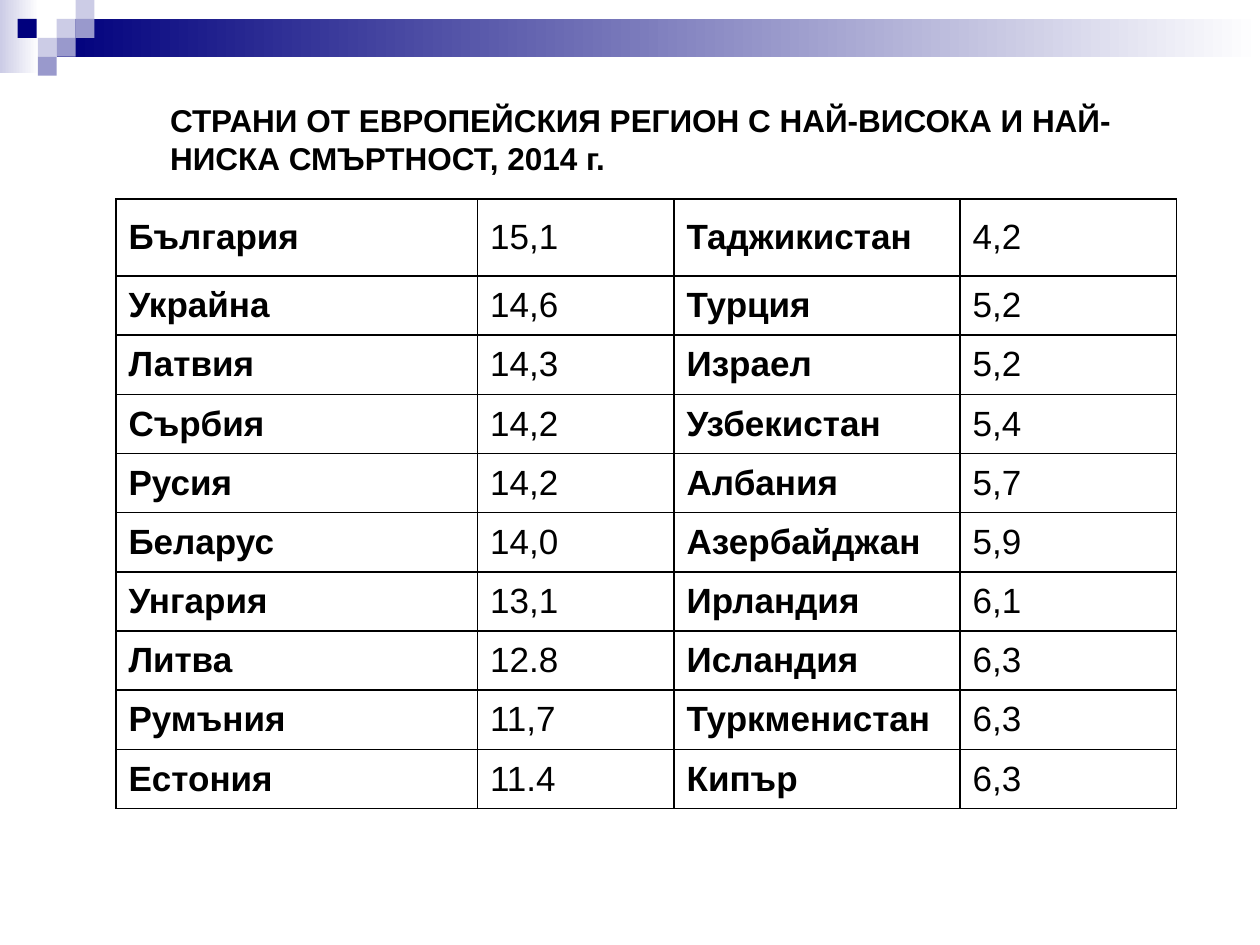
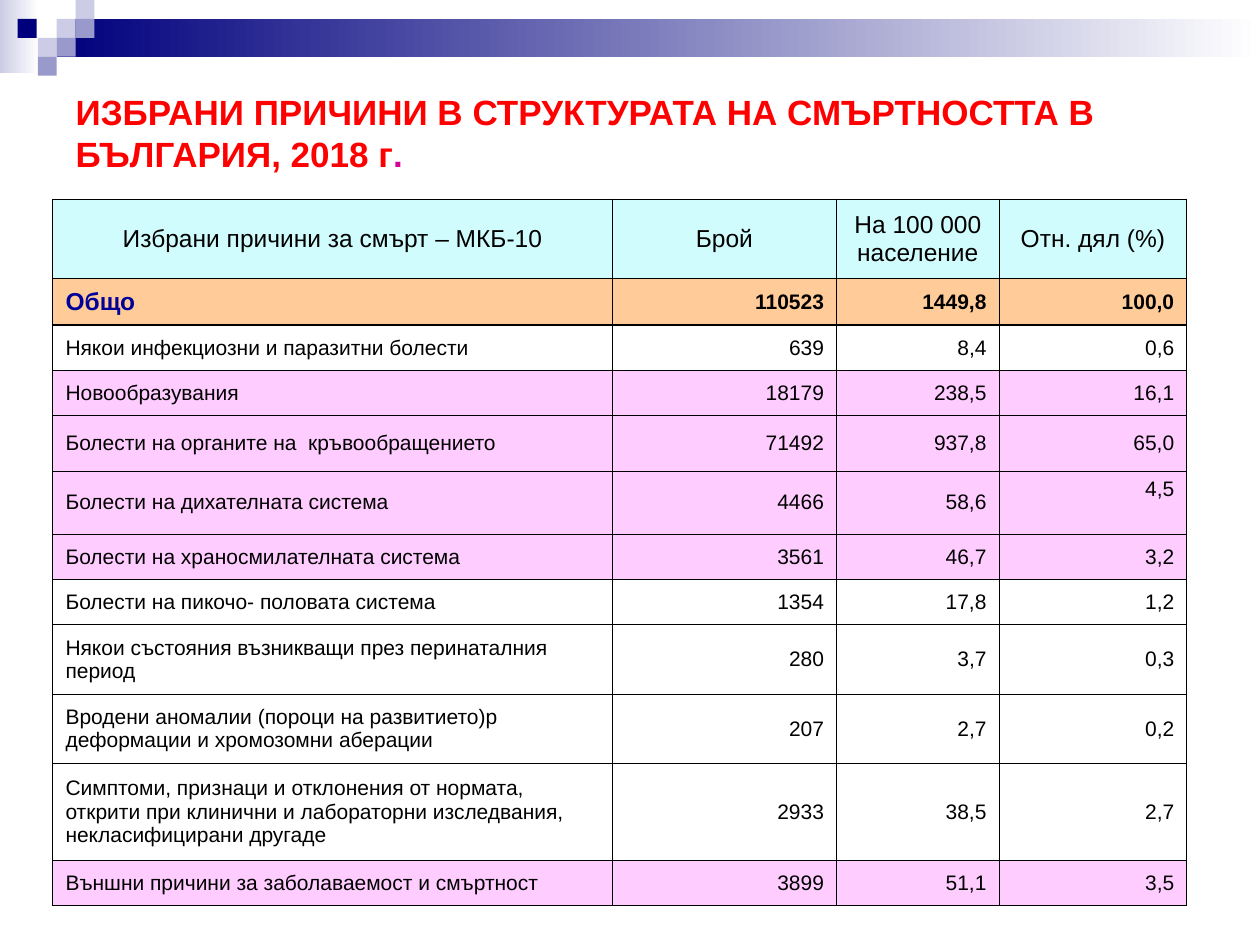
import pptx
import pptx.dml.color
import pptx.enum.shapes
import pptx.enum.text
import pptx.oxml
import pptx.oxml.ns
import pptx.util

Inches = pptx.util.Inches
ALIGN = pptx.enum.text.PP_ALIGN
ANCHOR = pptx.enum.text.MSO_ANCHOR

FONT = "Arial"
BLACK, WHITE, RED, MAGENTA = "000000", "FFFFFF", "FF0000", "D60093"
NAVY, LAVENDER, VIOLET = "00007D", "CCCCE6", "9999CC"
HEADER_FILL, TOTAL_FILL, KEY_CAUSE_FILL = "D1FCFD", "FFCC99", "FFCCFF"
TOTAL_TEXT = "000099"

BAND_SQUARE = 0.15
BAND_SQUARES = [  # left, top, colour
    (0.45, 0.15, LAVENDER), (0.6, 0, LAVENDER), (0.6, 0.15, VIOLET),
    (0.3, 0.3, LAVENDER), (0.14, 0.15, NAVY), (0.45, 0.3, VIOLET),
    (0.3, 0.45, VIOLET),
]

HIGHEST_AND_LOWEST = [
    ("България", "15,1", "Таджикистан", "4,2"),
    ("Украйна", "14,6", "Турция", "5,2"),
    ("Латвия", "14,3", "Израел", "5,2"),
    ("Сърбия", "14,2", "Узбекистан", "5,4"),
    ("Русия", "14,2", "Албания", "5,7"),
    ("Беларус", "14,0", "Азербайджан", "5,9"),
    ("Унгария", "13,1", "Ирландия", "6,1"),
    ("Литва", "12.8", "Исландия", "6,3"),
    ("Румъния", "11,7", "Туркменистан", "6,3"),
    ("Естония", "11.4", "Кипър", "6,3"),
]

CAUSES_HEADER = ("Избрани причини за смърт – МКБ-10", "Брой",
                 "На 100 000 население", "Отн. дял (%)")
CAUSES_TOTAL = ("Общо", "110523", "1449,8", "100,0")
CAUSES = [  # row height, fill, cells
    (0.36, None, ("Някои инфекциозни и паразитни болести", "639", "8,4", "0,6")),
    (0.36, KEY_CAUSE_FILL, ("Новообразувания", "18179", "238,5", "16,1")),
    (0.44, KEY_CAUSE_FILL, ("Болести на органите на  кръвообращението",
                            "71492", "937,8", "65,0")),
    (0.5, KEY_CAUSE_FILL, ("Болести на дихателната система", "4466", "58,6", "4,5")),
    (0.36, KEY_CAUSE_FILL, ("Болести на храносмилателната система",
                            "3561", "46,7", "3,2")),
    (0.36, None, ("Болести на пикочо- половата система", "1354", "17,8", "1,2")),
    (0.55, None, ("Някои състояния възникващи през перинаталния период",
                  "280", "3,7", "0,3")),
    (0.55, None, ("Вродени аномалии (пороци на развитието)р деформации и "
                  "хромозомни аберации", "207", "2,7", "0,2")),
    (0.77, None, ("Симптоми, признаци и отклонения от нормата, открити при "
                  "клинични и лабораторни изследвания, некласифицирани другаде",
                  "2933", "38,5", "2,7")),
    (0.36, KEY_CAUSE_FILL, ("Външни причини за заболаваемост и смъртност",
                            "3899", "51,1", "3,5")),
]
RESPIRATORY_ROW = 5


def rgb(colour):
    return pptx.dml.color.RGBColor.from_string(colour)


def format_run(run, size, colour=BLACK, bold=False):
    run.font.name = FONT
    run.font.size = pptx.util.Pt(size)
    run.font.bold = bold
    run.font.color.rgb = rgb(colour)


def add_band_part(slide, box, colour, fades=False):
    part = slide.shapes.add_shape(pptx.enum.shapes.MSO_SHAPE.RECTANGLE,
                                  *map(Inches, box))
    part.shadow.inherit = False
    part.line.fill.background()
    if fades:
        part.fill.gradient()
        part.fill.gradient_angle = 0
        for stop, stop_colour in zip(part.fill.gradient_stops, (colour, WHITE)):
            stop.color.rgb = rgb(stop_colour)
    else:
        part.fill.solid()
        part.fill.fore_color.rgb = rgb(colour)
    return part


def add_band_to_layout(slide):
    """Draw the top band and move it to the layout that all slides share."""
    parts = [add_band_part(slide, (0, 0, 0.31, 0.58), LAVENDER, fades=True),
             add_band_part(slide, (0.45, 0.15, 9.55, 0.3), NAVY, fades=True)]
    for left, top, colour in BAND_SQUARES:
        box = (left, top, BAND_SQUARE, BAND_SQUARE)
        parts.append(add_band_part(slide, box, colour))
    for part in parts:
        slide.slide_layout.shapes.element.append(part.element)


def set_title(slide, box, pieces, size):
    """Fill the title with pieces of (text, colour)."""
    title = slide.shapes.title
    title.left, title.top, title.width, title.height = map(Inches, box)
    frame = title.text_frame
    frame.word_wrap = True
    frame.auto_size = pptx.enum.text.MSO_AUTO_SIZE.SHAPE_TO_FIT_TEXT
    frame.vertical_anchor = ANCHOR.TOP
    heading = frame.paragraphs[0]
    heading.alignment = ALIGN.LEFT
    for text, colour in pieces:
        run = heading.add_run()
        run.text = text
        format_run(run, size, colour, bold=True)


def add_borders(cell, width):
    properties = cell._tc.get_or_add_tcPr()
    for side in "LRTB":
        properties.append(pptx.oxml.parse_xml(
            f'<a:ln{side} {pptx.oxml.ns.nsdecls("a")} w="{pptx.util.Pt(width)}">'
            f'<a:solidFill><a:srgbClr val="{BLACK}"/></a:solidFill></a:ln{side}>'))


def fill_cell(cell, text, size, border, colour=BLACK, bold=False,
              align=ALIGN.LEFT, fill=None):
    add_borders(cell, border)
    if fill:
        cell.fill.solid()
        cell.fill.fore_color.rgb = rgb(fill)
    else:
        cell.fill.background()
    cell.vertical_anchor = ANCHOR.MIDDLE
    cell.text_frame.text = text
    paragraph = cell.text_frame.paragraphs[0]
    paragraph.alignment = align
    format_run(paragraph.runs[0], size, colour, bold)


def add_grid(slide, left, top, widths, heights):
    frame = slide.shapes.add_table(
        len(heights), len(widths), Inches(left), Inches(top),
        Inches(sum(widths)), Inches(sum(heights)))
    grid = frame.table
    grid.first_row = grid.horz_banding = False
    for column, width in zip(grid.columns, widths):
        column.width = Inches(width)
    for row, height in zip(grid.rows, heights):
        row.height = Inches(height)
    return grid


def add_country_table(slide, left, top):
    heights = [0.61] + [0.47] * (len(HIGHEST_AND_LOWEST) - 1)
    grid = add_grid(slide, left, top, (2.87, 1.56, 2.27, 1.72), heights)
    for row, values in enumerate(HIGHEST_AND_LOWEST):
        for column, text in enumerate(values):
            is_country = column % 2 == 0
            fill_cell(grid.cell(row, column), text, 20, 1, bold=is_country)


def add_causes_table(slide, left, top):
    heights = [0.63, 0.37] + [height for height, _, _ in CAUSES]
    grid = add_grid(slide, left, top, (4.44, 1.78, 1.29, 1.49), heights)
    border = 0.75
    for column, text in enumerate(CAUSES_HEADER):
        fill_cell(grid.cell(0, column), text, 14, border,
                  align=ALIGN.CENTER, fill=HEADER_FILL)
    rows = [(TOTAL_FILL, CAUSES_TOTAL)] + [(fill, cells) for _, fill, cells in CAUSES]
    for row, (fill, cells) in enumerate(rows, start=1):
        for column, text in enumerate(cells):
            is_total_label = row == 1 and column == 0
            fill_cell(grid.cell(row, column), text,
                      14 if is_total_label else 12, border,
                      colour=TOTAL_TEXT if is_total_label else BLACK,
                      bold=row == 1,
                      align=ALIGN.RIGHT if column else ALIGN.LEFT, fill=fill)
    grid.cell(RESPIRATORY_ROW, 3).vertical_anchor = ANCHOR.TOP


def build_countries_slide(slide):
    add_country_table(slide, 0.92, 1.58)
    set_title(slide, (1.25, 0.75, 7.75, 0.7),
              [("СТРАНИ ОТ ЕВРОПЕЙСКИЯ РЕГИОН С НАЙ-ВИСОКА И НАЙ-НИСКА "
                "СМЪРТНОСТ, 2014 г.", BLACK)], 18)


def build_causes_slide(slide):
    add_causes_table(slide, 0.42, 1.58)
    set_title(slide, (0.5, 0.67, 9.5, 0.77),
              [("ИЗБРАНИ ПРИЧИНИ В СТРУКТУРАТА НА СМЪРТНОСТТА В "
                "БЪЛГАРИЯ, 2018 г", RED), (".", MAGENTA)], 20)


def main():
    deck = pptx.Presentation()
    deck.slide_width, deck.slide_height = Inches(10), Inches(7.5)
    title_only = deck.slide_layouts[5]
    countries = deck.slides.add_slide(title_only)
    add_band_to_layout(countries)
    build_countries_slide(countries)
    build_causes_slide(deck.slides.add_slide(title_only))
    deck.save("out.pptx")


if __name__ == "__main__":
    main()
